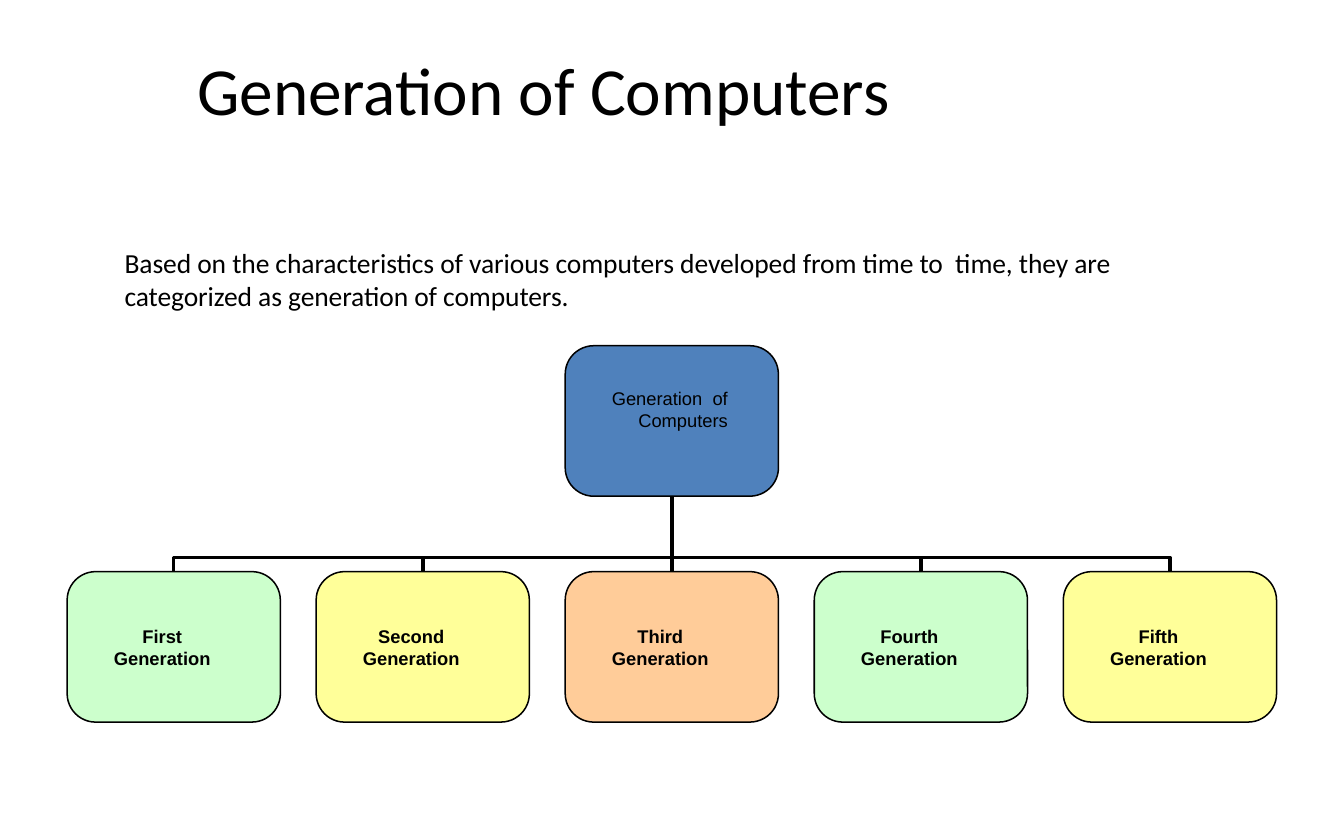
from pptx import Presentation
from pptx.dml.color import RGBColor
from pptx.enum import shapes, text
from pptx.oxml import xmlchemy as xml
from pptx.util import Pt

BLACK = "000000"
BOX_W, BOX_H, GAP = 139.5, 98.4, 23.4
RAIL = 9.3
KIDS = [
    ("First", "CCFFCC"),
    ("Second", "FFFF99"),
    ("Third", "FFCC99"),
    ("Fourth", "CCFFCC"),
    ("Fifth", "FFFF99"),
]


def paint(fmt, color):
    fmt.solid()
    fmt.fore_color.rgb = RGBColor.from_string(color)


def stroke(line, width):
    paint(line.fill, BLACK)
    line.width = Pt(width)


def write(frame, words, font, size, align, pads, bold=False):
    frame.text = words
    frame.word_wrap = True
    frame.auto_size = text.MSO_AUTO_SIZE.NONE
    frame.margin_left, frame.margin_top, frame.margin_right, frame.margin_bottom = map(Pt, pads)
    para = frame.paragraphs[0]
    para.alignment = align
    for run in para.runs:
        run.font.name = font
        run.font.size = Pt(size)
        run.font.bold = bold
        paint(run.font.fill, BLACK)


def head(shape, box, words, size):
    shape.left, shape.top, shape.width, shape.height = map(Pt, box)
    write(shape.text_frame, words, "Calibri", size, text.PP_ALIGN.LEFT, (0, 1, 0, 0))
    shape.text_frame.vertical_anchor = text.MSO_ANCHOR.TOP


def node(slide, left, top, words, color, align, pads, bold):
    card = slide.shapes.add_shape(
        shapes.MSO_SHAPE.ROUNDED_RECTANGLE, Pt(left), Pt(top), Pt(BOX_W), Pt(BOX_H))
    card.adjustments[0] = 0.19
    card.shadow.inherit = False
    paint(card.fill, color)
    stroke(card.line, 1)
    write(card.text_frame, words, "Arial", 12, align, pads, bold)
    card.text_frame.vertical_anchor = text.MSO_ANCHOR.MIDDLE


def trunk(slide, x, top, end):
    line = slide.shapes.add_connector(
        shapes.MSO_CONNECTOR.STRAIGHT, Pt(x), Pt(top), Pt(x), Pt(end))
    stroke(line.line, 2.25)
    line._element.spPr.append(xml.OxmlElement("a:effectLst"))


def branch(slide, x, mid, top, end):
    pen = slide.shapes.build_freeform(Pt(x), Pt(end))
    turns = [(x, end - RAIL), (mid, end - RAIL), (mid, top)]
    pen.add_line_segments([(Pt(a), Pt(b)) for a, b in turns], close=False)
    bend = pen.convert_to_shape()
    bend.shadow.inherit = False
    bend.fill.background()
    stroke(bend.line, 2.25)


def tree(slide, box):
    left, top, width, height = box
    mid = left + width / 2
    row = top + height - BOX_H
    lefts = [left + i * (BOX_W + GAP) for i in range(len(KIDS))]
    for i, x in enumerate(lefts):
        if i == len(KIDS) // 2:
            trunk(slide, mid, top + BOX_H, row)
        else:
            branch(slide, x + BOX_W / 2, mid, top + BOX_H, row)
    node(slide, mid - BOX_W / 2, top, "Generation  of Computers", "4F81BC",
         text.PP_ALIGN.RIGHT, (18, 0, 27.5, 0), False)
    for x, (name, color) in zip(lefts, KIDS):
        node(slide, x, row, name + " Generation", color,
             text.PP_ALIGN.CENTER, (20, 0, 35, 0), True)


def main():
    deck = Presentation()
    deck.slide_width, deck.slide_height = Pt(879.12), Pt(540)
    slide = deck.slides.add_slide(deck.slide_layouts[5])
    head(slide.shapes.title, (129, 30.5, 556, 55), "Generation of Computers", 44)
    note = slide.shapes.add_textbox(0, 0, 0, 0)
    head(note, (81.5, 160, 695, 45),
         "Based on the characteristics of various computers developed from time to  time, "
         "they are categorized as generation of computers.", 18)
    for run in note.text_frame.paragraphs[0].runs:
        run._r.get_or_add_rPr().set("spc", "-5")
    root = slide.shapes
    total = len(KIDS) * BOX_W + (len(KIDS) - 1) * GAP
    tree(slide, (43.9, 226, total, 246.1))
    card = next(s for s in root if s.has_text_frame and s.text_frame.text.endswith("of Computers")
                and s != root.title)
    card.text_frame.margin_bottom = Pt(15)
    deck.save("out.pptx")


if __name__ == "__main__":
    main()
